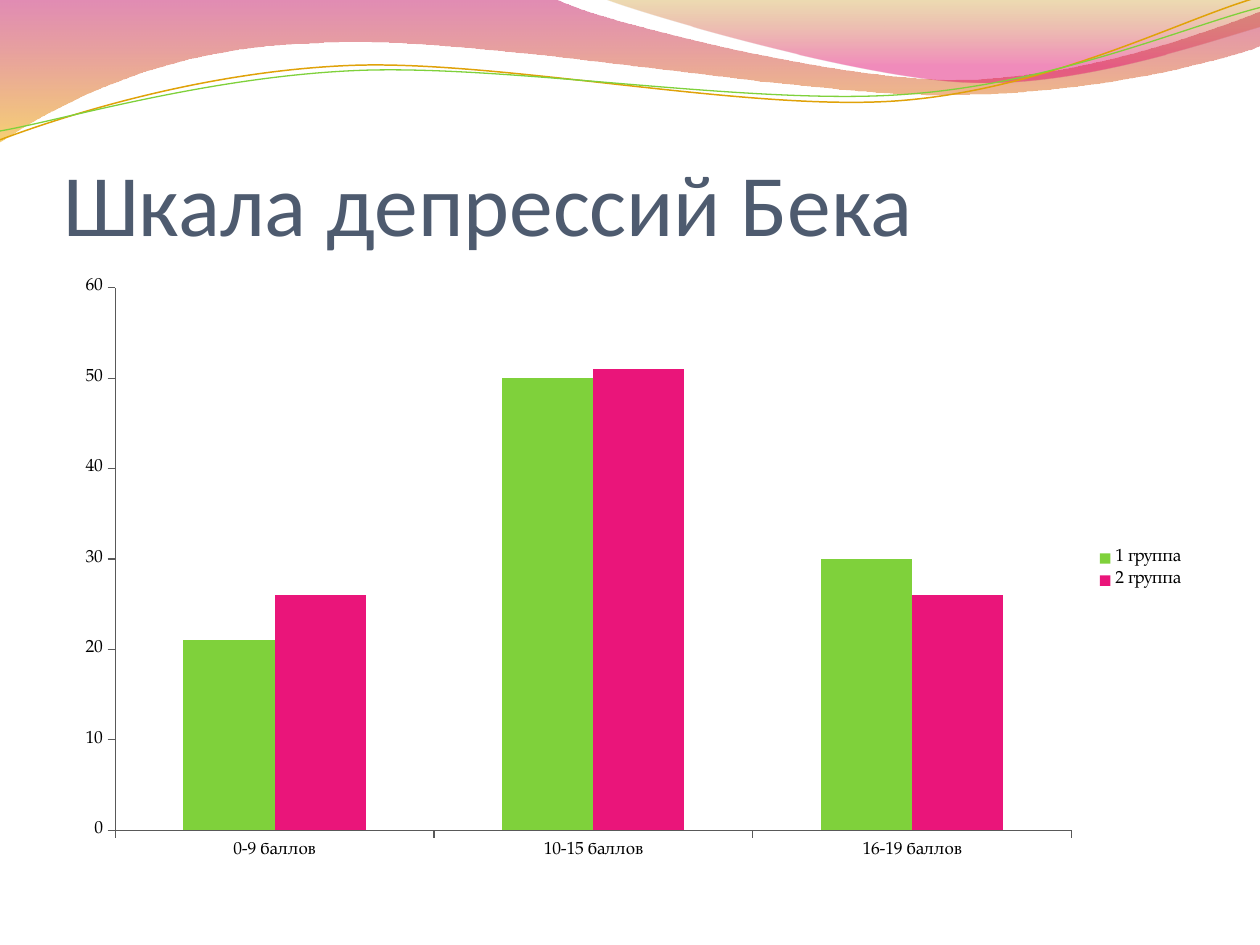
import math

import pptx
import pptx.util
import pptx.chart.data
import pptx.dml.color
import pptx.enum.chart
import pptx.enum.text
import pptx.oxml
import pptx.oxml.ns

Inches = pptx.util.Inches
Pt = pptx.util.Pt
RGBColor = pptx.dml.color.RGBColor
qn = pptx.oxml.ns.qn
SPACE = pptx.oxml.ns.nsdecls("a")

SLATE = RGBColor(0x4E, 0x5B, 0x6F)
GREEN = RGBColor(0x7F, 0xD1, 0x3B)
PINK = RGBColor(0xEA, 0x15, 0x7A)
WINE = RGBColor(0xBD, 0x00, 0x59)
AMBER = RGBColor(0xF0, 0xAB, 0x00)
OCHRE = RGBColor(0xC3, 0x8B, 0x00)
ROSE = RGBColor(0xE1, 0x00, 0x6B)
GOLD = RGBColor(0xE0, 0xA2, 0x09)
GREY = RGBColor(0x59, 0x59, 0x59)
BLACK = RGBColor(0, 0, 0)

TITLE = "Шкала депрессий Бека"
TITLE_BOX = (0.5, 0.77, 9, 1.25)
CHART_BOX = (0.5, 2.12, 9, 4.8)
CATS = ["0-9 баллов", "10-15 баллов", "16-19 баллов"]
SERIES = [
    ("1 группа", [21, 50, 30], GREEN),
    ("2 группа", [26, 51, 26], PINK),
]

BANDS = [
    ([(0, 0), (4.4, -0.01),
      (4.76, 0.17, 6.64, 0.63, 7.58, 0.63),
      (8.53, 0.63, 9.58, 0.26, 10, 0.09),
      (10.01, 0.36),
      (9.83, 0.44, 8.7, 0.76, 7.46, 0.75),
      (6.22, 0.75, 3.82, 0.28, 2.57, 0.34),
      (1.29, 0.36, 0.46, 0.83, -0.01, 1.13),
      (0, 0)],
     [(0, WINE, 45), (1, AMBER, 55)]),
    ([(4.79, -0.01),
      (5.09, 0.11, 6.82, 0.62, 7.69, 0.65),
      (8.56, 0.69, 9.61, 0.32, 10, 0.21),
      (10, 0), (4.79, -0.01)],
     [(0, OCHRE, 30), (0.8, ROSE, 45)]),
]
TILT = 2.7
WAVES = [
    ([(0, 1.11),
      (0.48, 0.93, 1.58, 0.57, 2.77, 0.52),
      (3.95, 0.47, 5.93, 0.89, 7.13, 0.8),
      (8.33, 0.71, 9.38, 0.15, 9.98, -0.02)],
     (4.99, 0.57), GOLD, 0.85),
    ([(0, 1.04),
      (0.47, 0.96, 1.64, 0.61, 2.83, 0.56),
      (4.03, 0.51, 5.97, 0.84, 7.17, 0.75),
      (8.36, 0.67, 9.41, 0.21, 10, 0.06)],
     (5, 0.59), GREEN, 0.75),
]


def style(item, values):
    for name, value in values.items():
        setattr(item, name, value)


def pairs(part):
    return list(zip(part[::2], part[1::2]))


def turn(part, hub):
    angle = math.radians(TILT)
    cos, sin = math.cos(angle), math.sin(angle)
    flat = []
    for x, y in pairs(part):
        dx, dy = x - hub[0], y - hub[1]
        flat += [hub[0] + dx * cos - dy * sin, hub[1] + dx * sin + dy * cos]
    return tuple(flat)


def draw(slide, route, close):
    route = [tuple(map(Inches, part)) for part in route]
    ends = [part[-2:] for part in route]
    pen = slide.shapes.build_freeform(*ends[0], scale=1)
    pen.add_line_segments(ends[1:], close=close)
    shape = pen.convert_to_shape()
    shape.shadow.inherit = False
    left, top = shape.left, shape.top
    lines = list(shape.element.spPr.iter(qn("a:lnTo")))
    for line, part in zip(lines, route[1:]):
        if len(part) == 6:
            knots = "".join(f'<a:pt x="{x - left}" y="{y - top}"/>'
                            for x, y in pairs(part))
            curve = pptx.oxml.parse_xml(
                f'<a:cubicBezTo {SPACE}>{knots}</a:cubicBezTo>')
            line.getparent().replace(line, curve)
    return shape


def add_band(slide, route, stops):
    shape = draw(slide, route, True)
    shape.line.fill.background()
    shape.fill.gradient()
    shape.fill.gradient_angle = 270
    for stop, (place, color, alpha) in zip(shape.fill.gradient_stops, stops):
        stop.position = place
        stop.color.rgb = color
    nodes = shape.element.spPr.iter(qn("a:srgbClr"))
    for node, (place, color, alpha) in zip(nodes, stops):
        node.append(pptx.oxml.parse_xml(
            f'<a:alpha {SPACE} val="{alpha * 1000}"/>'))


def add_wave(slide, route, hub, color, width):
    shape = draw(slide, [turn(part, hub) for part in route], False)
    shape.rotation = 360 - TILT
    shape.fill.background()
    shape.line.color.rgb = color
    shape.line.width = Pt(width)


def set_title(slide):
    title = slide.shapes.title
    left, top, width, height = map(Inches, TITLE_BOX)
    style(title, dict(left=left, top=top, width=width, height=height))
    frame = title.text_frame
    style(frame, dict(
        text=TITLE, word_wrap=True, margin_left=0, margin_right=0,
        margin_top=Inches(0.05), margin_bottom=0,
        auto_size=pptx.enum.text.MSO_AUTO_SIZE.NONE,
        vertical_anchor=pptx.enum.text.MSO_ANCHOR.BOTTOM))
    line = frame.paragraphs[0]
    line.alignment = pptx.enum.text.PP_ALIGN.LEFT
    font = line.runs[0].font
    style(font, dict(name="Calibri", size=Pt(50)))
    font.color.rgb = SLATE
    title.element.getparent().append(title.element)


def add_bars(slide):
    data = pptx.chart.data.CategoryChartData()
    data.categories = CATS
    for name, values, color in SERIES:
        data.add_series(name, values)
    kind = pptx.enum.chart.XL_CHART_TYPE.COLUMN_CLUSTERED
    chart = slide.shapes.add_chart(kind, *map(Inches, CHART_BOX), data).chart
    style(chart, dict(has_title=False, has_legend=True))
    style(chart.font, dict(name="TeX Gyre Pagella", size=Pt(10)))
    chart.font.color.rgb = BLACK
    style(chart.legend, dict(
        position=pptx.enum.chart.XL_LEGEND_POSITION.RIGHT,
        include_in_layout=False))
    plot = chart.plots[0]
    style(plot, dict(gap_width=150, overlap=0, vary_by_categories=False))
    for bar, (name, values, color) in zip(plot.series, SERIES):
        bar.format.fill.solid()
        bar.format.fill.fore_color.rgb = color
    for axis in (chart.category_axis, chart.value_axis):
        style(axis, dict(
            has_major_gridlines=False,
            major_tick_mark=pptx.enum.chart.XL_TICK_MARK.OUTSIDE,
            minor_tick_mark=pptx.enum.chart.XL_TICK_MARK.NONE))
        axis.format.line.color.rgb = GREY
        axis.format.line.width = Pt(0.75)
    style(chart.value_axis, dict(
        minimum_scale=0, maximum_scale=60, major_unit=10))


def main():
    deck = pptx.Presentation()
    style(deck, dict(slide_width=Inches(10), slide_height=Inches(7.5)))
    slide = deck.slides.add_slide(deck.slide_layouts[5])
    for band in BANDS:
        add_band(slide, *band)
    for wave in WAVES:
        add_wave(slide, *wave)
    set_title(slide)
    add_bars(slide)
    deck.save("out.pptx")


if __name__ == "__main__":
    main()
